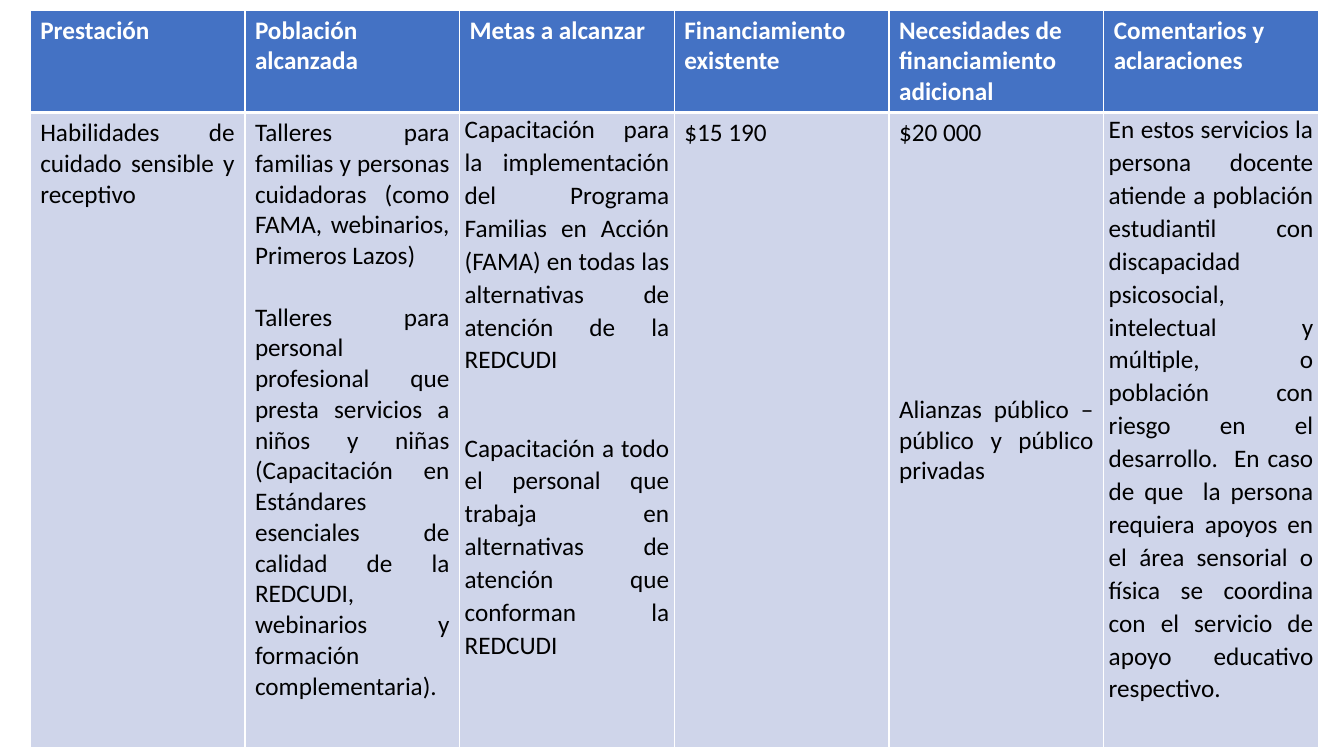
from lxml.etree import SubElement as Sub
from pptx import Presentation
from pptx.dml.color import RGBColor
from pptx.enum.text import PP_ALIGN as Align
from pptx.oxml.ns import qn
from pptx.util import Pt

WHITE = RGBColor(0xFF, 0xFF, 0xFF)
BLACK = RGBColor(0, 0, 0)
BLUE = RGBColor(0x44, 0x72, 0xC4)
PALE = RGBColor(0xCF, 0xD5, 0xEA)

LEFT, TOP, WIDTH = Pt(21.6), Pt(7.2), Pt(920.16)
HEIGHTS = [Pt(70.56), Pt(453.6)]
THIN, THICK = Pt(1), Pt(3)

# Text formats
FONT = {"name": "Calibri", "size": Pt(18)}
HEAD = {"alignment": Align.LEFT}
BODY = {"alignment": Align.JUSTIFY}
LOOSE = {**BODY, "line_spacing": 1.07, "space_after": Pt(8)}
TIGHT = {"margin_left": Pt(3.6), "margin_right": Pt(3.6),
         "margin_top": Pt(0), "margin_bottom": Pt(0)}

# Each column: heading, paragraphs, paragraph format, margins, gap before
# every paragraph after the first
COLUMNS = [
    ("Prestación",
     ["Habilidades de cuidado sensible y receptivo"], BODY, {}, 0),
    ("Población alcanzada",
     ["Talleres para familias y personas cuidadoras (como FAMA, webinarios, "
      "Primeros Lazos)",
      "Talleres para personal profesional que presta servicios a niños y "
      "niñas (Capacitación en Estándares esenciales de calidad de la "
      "REDCUDI, webinarios y formación complementaria)."], BODY, {}, 22),
    ("Metas a alcanzar",
     ["Capacitación para la implementación del Programa Familias en Acción "
      "(FAMA) en todas las alternativas de atención de la REDCUDI",
      "Capacitación a todo el personal que trabaja en alternativas de "
      "atención que conforman la REDCUDI"], LOOSE, TIGHT, 31.5),
    ("Financiamiento existente", ["$15 190"], BODY, {}, 0),
    ("Necesidades de financiamiento adicional",
     ["$20 000", "Alianzas público – público y público privadas"],
     BODY, {}, 175.8),
    ("Comentarios y aclaraciones",
     ["En estos servicios la persona docente atiende a población estudiantil "
      "con discapacidad psicosocial, intelectual y múltiple, o población con "
      "riesgo en el desarrollo.  En caso de que  la persona requiera apoyos "
      "en el área sensorial o física se coordina con el servicio de apoyo "
      "educativo respectivo."], LOOSE, TIGHT, 0),
]


def apply(item, form):
    for key, value in form.items():
        setattr(item, key, value)


def add_edges(cell, widths):
    props = cell._tc.get_or_add_tcPr()
    for side, width in widths.items():
        line = Sub(props, qn(f"a:ln{side}"), w=str(width))
        fill = Sub(line, qn("a:solidFill"))
        Sub(fill, qn("a:srgbClr"), val=str(WHITE))


def fill_cell(cell, texts, form, color, bold, back, gap=0):
    cell.fill.solid()
    cell.fill.fore_color.rgb = back
    frame = cell.text_frame
    for i, text in enumerate(texts):
        para = frame.add_paragraph() if i else frame.paragraphs[0]
        apply(para, form)
        if i:
            para.space_before = Pt(gap)
        run = para.add_run()
        run.text = text
        apply(run.font, {**FONT, "bold": bold})
        run.font.color.rgb = color


def add_grid(slide):
    shape = slide.shapes.add_table(len(HEIGHTS), len(COLUMNS), LEFT, TOP,
                                   WIDTH, sum(HEIGHTS))
    table = shape.table
    for row, height in zip(table.rows, HEIGHTS):
        row.height = height
    for i, (title, texts, form, inset, gap) in enumerate(COLUMNS):
        table.columns[i].width = WIDTH // len(COLUMNS)
        head, body = table.cell(0, i), table.cell(1, i)
        # Edges come before the fill in the cell XML
        add_edges(head, {"L": THIN, "R": THIN, "T": THIN, "B": THICK})
        add_edges(body, {"L": THIN, "R": THIN, "T": THICK, "B": THIN})
        fill_cell(head, [title], HEAD, WHITE, True, BLUE)
        fill_cell(body, texts, form, BLACK, False, PALE, gap)
        apply(body, inset)


def main():
    deck = Presentation()
    deck.slide_width, deck.slide_height = Pt(960), Pt(540)
    slide = deck.slides.add_slide(deck.slide_layouts[6])
    add_grid(slide)
    deck.save("out.pptx")


if __name__ == "__main__":
    main()
